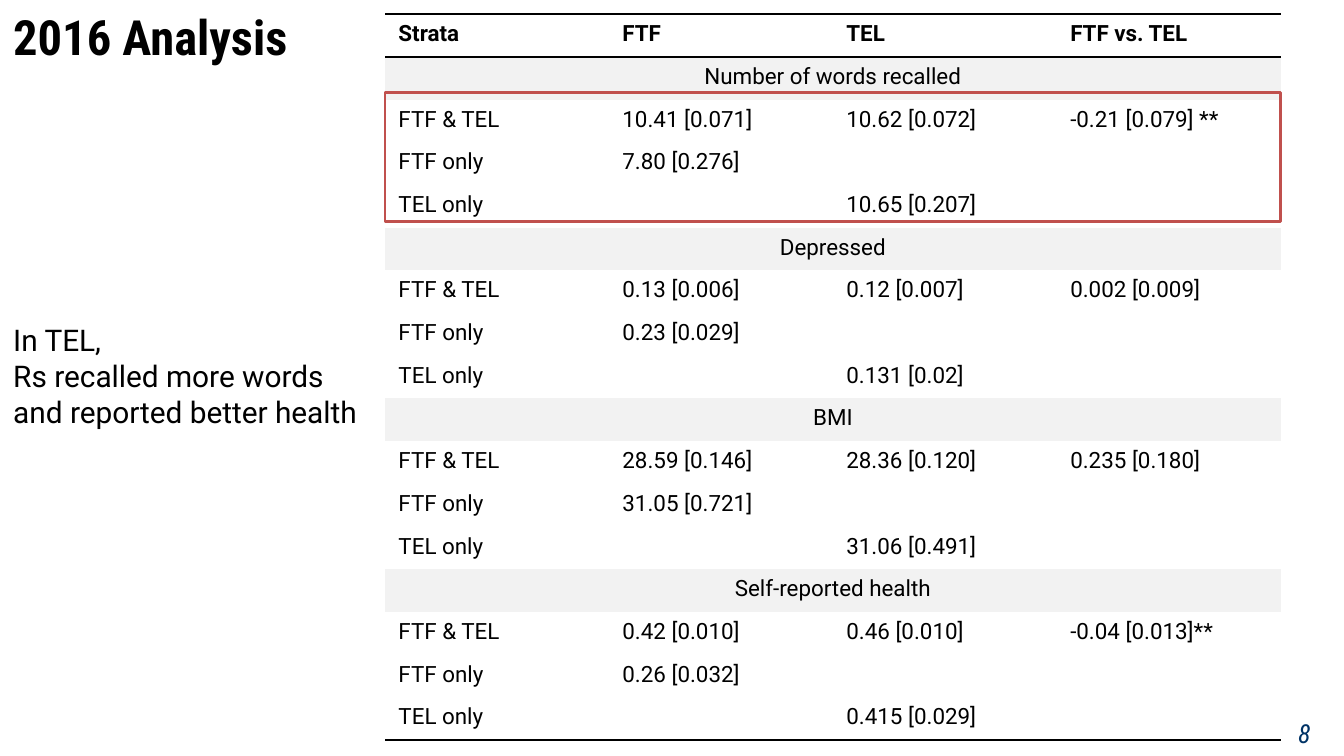
from dataclasses import dataclass

from pptx import Presentation
from pptx.dml.color import RGBColor
from pptx.enum.shapes import MSO_SHAPE as Shape
from pptx.enum.text import PP_ALIGN as Align
from pptx.oxml import parse_xml
from pptx.oxml.ns import nsdecls
from pptx.util import Pt

PX = 4572  # EMU per px, 200 px to the inch
NO_GRID_STYLE = "{2D5ABB26-0587-4C30-8999-92F81FD0307C}"


@dataclass(frozen=True)
class Theme:
    ink: str = "000000"
    navy: str = "003366"
    band: str = "F2F2F2"
    accent: str = "C0504D"
    body_font: str = "Roboto"
    head_font: str = "Roboto Condensed"
    title_size: int = 26
    body_size: int = 16
    number_size: int = 14
    table_size: int = 12


THEME = Theme()

HEADINGS = ["Strata", "FTF", "TEL", "FTF vs. TEL"]
STRATA = ["FTF & TEL", "FTF only", "TEL only"]
# Measure: FTF, TEL and difference for both modes, then FTF only, then TEL only
MEASURES = {
    "Number of words recalled": (
        ["10.41 [0.071]", "10.62 [0.072]", "-0.21 [0.079] **"], "7.80 [0.276]", "10.65 [0.207]"),
    "Depressed": (
        ["0.13 [0.006]", "0.12 [0.007]", "0.002 [0.009]"], "0.23 [0.029]", "0.131 [0.02]"),
    "BMI": (
        ["28.59 [0.146]", "28.36 [0.120]", "0.235 [0.180]"], "31.05 [0.721]", "31.06 [0.491]"),
    "Self-reported health": (
        ["0.42 [0.010]", "0.46 [0.010]", "-0.04 [0.013]**"], "0.26 [0.032]", "0.415 [0.029]"),
}


def px(length):
    return length * PX


def write(frame, text, *, size, font=THEME.body_font, color=THEME.ink,
          bold=False, italic=False, align=Align.LEFT):
    """Fill a text frame, one paragraph per line; empty lines keep the size."""
    for number, line in enumerate(text.split("\n")):
        paragraph = frame.add_paragraph() if number else frame.paragraphs[0]
        paragraph.alignment = align
        if not line:
            paragraph._p.append(parse_xml(f'<a:endParaRPr {nsdecls("a")} sz="{size * 100}"/>'))
            continue
        run = paragraph.add_run()
        run.text = line
        run.font.size = Pt(size)
        run.font.name = font
        run.font.bold = bold
        run.font.italic = italic
        run.font.color.rgb = RGBColor.from_string(color)


def add_border(cell, side, color):
    cell._tc.get_or_add_tcPr().append(parse_xml(
        f'<a:ln{side} {nsdecls("a")} w="{Pt(1)}"><a:solidFill>'
        f'<a:srgbClr val="{color}"/></a:solidFill></a:ln{side}>'))


class SlideBuilder:
    def __init__(self, slide, theme):
        self.shapes = slide.shapes
        self.theme = theme

    def text(self, text, left, top, width, height, **style):
        frame = self.shapes.add_textbox(px(left), px(top), px(width), px(height)).text_frame
        frame.word_wrap = True
        write(frame, text, **style)

    def outline(self, left, top, width, height):
        box = self.shapes.add_shape(Shape.RECTANGLE, px(left), px(top), px(width), px(height))
        box.shadow.inherit = False
        box.fill.background()
        box.line.color.rgb = RGBColor.from_string(self.theme.accent)
        box.line.width = Pt(1.5)

    def table(self, rows, left, top, width, height):
        """Draw rows of texts; a row with a single text becomes a merged band."""
        columns = len(rows[0])
        frame = self.shapes.add_table(
            len(rows), columns, px(left), px(top), px(width), px(height))
        table = frame.table
        table.first_row = table.horz_banding = False
        frame._element.graphic.graphicData.tbl.tblPr.find(
            "{*}tableStyleId").text = NO_GRID_STYLE
        for index, texts in enumerate(rows):
            is_header = index == 0
            is_band = len(texts) == 1
            sides = "TB" if is_header else "B" if index == len(rows) - 1 else ""
            if is_band:
                table.cell(index, 0).merge(table.cell(index, columns - 1))
            for column in range(columns):
                cell = table.cell(index, column)
                for side in sides:
                    add_border(cell, side, self.theme.ink)
                if is_band:
                    cell.fill.solid()
                    cell.fill.fore_color.rgb = RGBColor.from_string(self.theme.band)
                else:
                    cell.fill.background()
                write(cell.text_frame, texts[column] if column < len(texts) else "",
                      size=self.theme.table_size, bold=is_header,
                      align=Align.CENTER if is_band else Align.LEFT)


def table_rows():
    rows = [HEADINGS]
    for measure, (both, ftf_only, tel_only) in MEASURES.items():
        values = [both, [ftf_only, "", ""], ["", tel_only, ""]]
        rows.append([measure])
        rows += [[stratum, *row] for stratum, row in zip(STRATA, values)]
    return rows


def main():
    deck = Presentation()
    deck.slide_width, deck.slide_height = px(2000), px(1125)
    page = SlideBuilder(deck.slides.add_slide(deck.slide_layouts[6]), THEME)

    page.text("8", 1912, 1058, 102, 68, size=THEME.number_size,
              font=THEME.head_font, color=THEME.navy, italic=True)
    page.text("2016 Analysis", 0, 0, 2000, 116,
              size=THEME.title_size, font=THEME.head_font, bold=True)
    page.table(table_rows(), 573, 21, 1333, 1081)
    page.text("In TEL,\nRs recalled more words and reported better health",
              0, 469, 556, 242, size=THEME.body_size)
    page.outline(573, 138, 1333, 192)

    deck.save("out.pptx")


if __name__ == "__main__":
    main()
